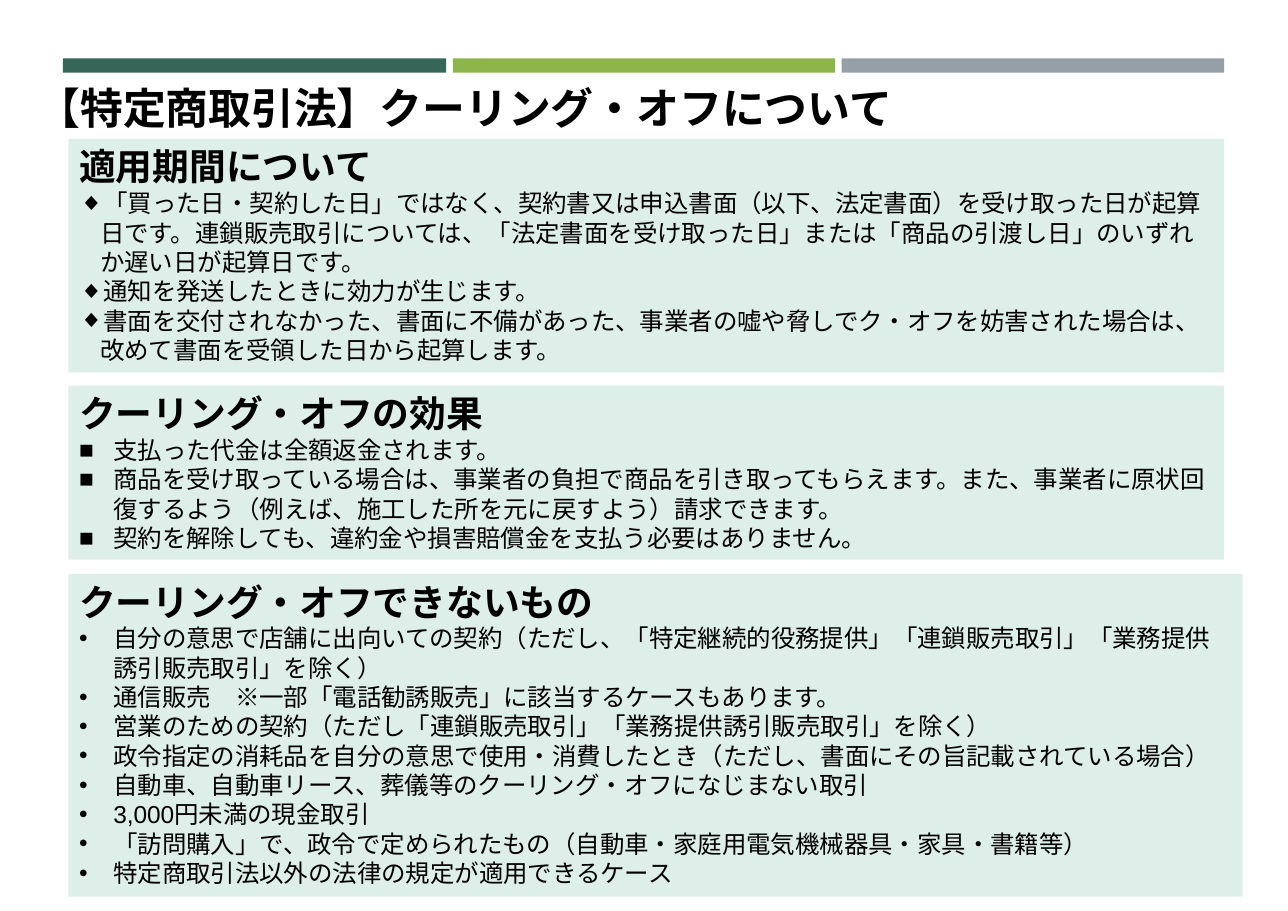
from dataclasses import dataclass

from lxml import etree
from pptx import Presentation
from pptx import util as u
from pptx.dml.color import RGBColor
from pptx.enum import lang, shapes, text
from pptx.oxml.ns import qn

TITLE = "【特定商取引法】クーリング・オフについて"
TITLE_BOX = (24, 69, 878, 57)
BARS = [(57, 348, "366658"), (411, 347, "8CB64A"), (764, 347, "969FA7")]
BAR_TOP, BAR_HEIGHT = 53, 13
PANELS = [
    {
        "box": (62, 126, 1049, 212), "bullet": "◆", "indent": 19,
        "heading": "適用期間について",
        "items": [
            "「買った日・契約した日」ではなく、契約書又は申込書面（以下、法定書面）を受け取った日が起算日です。"
            "連鎖販売取引については、「法定書面を受け取った日」または「商品の引渡し日」のいずれか遅い日が起算日です。",
            "通知を発送したときに効力が生じます。",
            "書面を交付されなかった、書面に不備があった、事業者の嘘や脅しでク・オフを妨害された場合は、"
            "改めて書面を受領した日から起算します。",
        ],
    },
    {
        "box": (62, 350, 1049, 158), "bullet": "■", "indent": 31,
        "heading": "クーリング・オフの効果",
        "items": [
            "支払った代金は全額返金されます。",
            "商品を受け取っている場合は、事業者の負担で商品を引き取ってもらえます。"
            "また、事業者に原状回復するよう（例えば、施工した所を元に戻すよう）請求できます。",
            "契約を解除しても、違約金や損害賠償金を支払う必要はありません。",
        ],
    },
    {
        "box": (62, 521, 1066, 293), "bullet": "•", "indent": 31,
        "heading": "クーリング・オフできないもの",
        "items": [
            "自分の意思で店舗に出向いての契約（ただし、「特定継続的役務提供」「連鎖販売取引」「業務提供誘引販売取引」を除く）",
            "通信販売　※一部「電話勧誘販売」に該当するケースもあります。",
            "営業のための契約（ただし「連鎖販売取引」「業務提供誘引販売取引」を除く）",
            "政令指定の消耗品を自分の意思で使用・消費したとき（ただし、書面にその旨記載されている場合）",
            "自動車、自動車リース、葬儀等のクーリング・オフになじまない取引",
            "3,000円未満の現金取引",
            "「訪問購入」で、政令で定められたもの（自動車・家庭用電気機械器具・家具・書籍等）",
            "特定商取引法以外の法律の規定が適用できるケース",
        ],
    },
]


@dataclass(frozen=True)
class Theme:
    font: str = "Arial"
    ink: str = "000000"
    panel: str = "DEEEE9"
    title: int = 28
    heading: int = 24
    body: int = 16


THEME = Theme()
SLIDE_SIZE = (1169, 827)
PX_PER_INCH = 100


def px(length):
    return u.Inches(length / PX_PER_INCH)


def write(paragraph, content, size, bold):
    paragraph.text = content
    paragraph.alignment = text.PP_ALIGN.LEFT
    for run in paragraph.runs:
        font = run.font
        font.name = THEME.font
        font.size = u.Pt(size)
        font.bold = bold
        font.color.rgb = RGBColor.from_string(THEME.ink)
        font.language_id = lang.MSO_LANGUAGE_ID.JAPANESE
        east_asian = etree.SubElement(run._r.get_or_add_rPr(), qn("a:ea"))
        east_asian.set("typeface", THEME.font)


def add_bullet(paragraph, character, indent):
    properties = paragraph._p.get_or_add_pPr()
    properties.set("marL", str(px(indent)))
    properties.set("indent", str(-px(indent)))
    etree.SubElement(properties, qn("a:buFont")).set("typeface", THEME.font)
    etree.SubElement(properties, qn("a:buChar")).set("char", character)


def add_block(slide, box, color):
    shape = slide.shapes.add_shape(shapes.MSO_SHAPE.RECTANGLE, *map(px, box))
    shape.shadow.inherit = False
    shape.fill.solid()
    shape.fill.fore_color.rgb = RGBColor.from_string(color)
    shape.line.fill.background()
    return shape


def fit_frame(shape):
    frame = shape.text_frame
    frame.word_wrap = True
    frame.auto_size = text.MSO_AUTO_SIZE.SHAPE_TO_FIT_TEXT
    frame.vertical_anchor = text.MSO_ANCHOR.TOP
    return frame


def add_title(slide):
    title = slide.shapes.title
    title.left, title.top, title.width, title.height = map(px, TITLE_BOX)
    write(fit_frame(title).paragraphs[0], TITLE, THEME.title, True)


def add_panel(slide, panel):
    frame = fit_frame(add_block(slide, panel["box"], THEME.panel))
    write(frame.paragraphs[0], panel["heading"], THEME.heading, True)
    for item in panel["items"]:
        paragraph = frame.add_paragraph()
        write(paragraph, item, THEME.body, False)
        add_bullet(paragraph, panel["bullet"], panel["indent"])


def main():
    presentation = Presentation()
    presentation.slide_width, presentation.slide_height = map(px, SLIDE_SIZE)
    slide = presentation.slides.add_slide(presentation.slide_layouts[5])
    add_title(slide)
    for left, width, color in BARS:
        add_block(slide, (left, BAR_TOP, width, BAR_HEIGHT), color)
    for panel in PANELS:
        add_panel(slide, panel)
    presentation.save("out.pptx")


if __name__ == "__main__":
    main()
